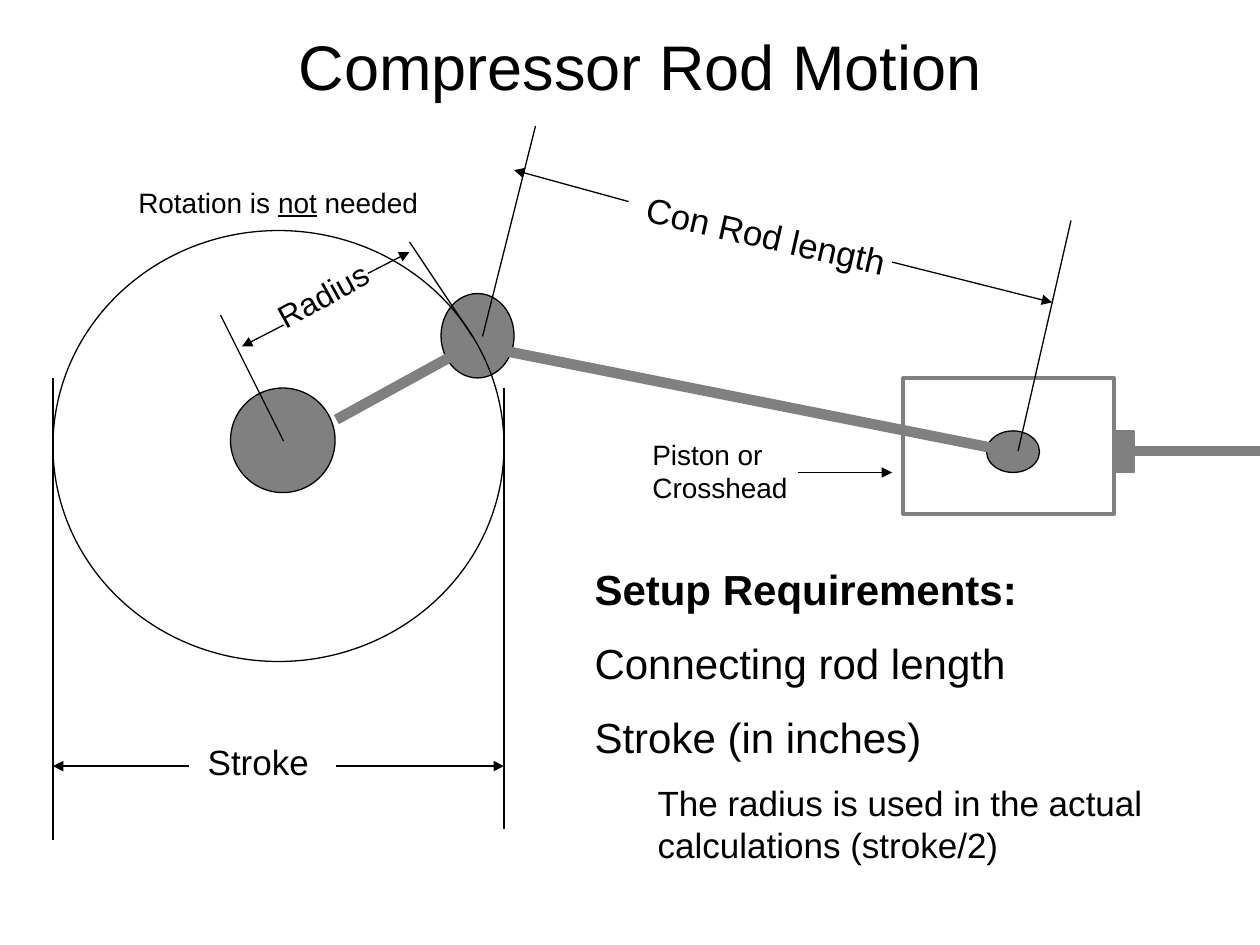
"""Build the compressor rod motion slide."""
from lxml import etree
from pptx import Presentation
from pptx.dml.color import RGBColor
from pptx.enum.shapes import MSO_CONNECTOR, MSO_SHAPE
from pptx.enum.text import PP_ALIGN
from pptx.oxml.ns import qn
from pptx.util import Inches, Pt

OVAL, RECT = MSO_SHAPE.OVAL, MSO_SHAPE.RECTANGLE
STRAIGHT = MSO_CONNECTOR.STRAIGHT
LEFT, CENTER = PP_ALIGN.LEFT, PP_ALIGN.CENTER
BLACK, GRAY = "000000", "808080"

PINS = [
    (1.83, 3.08, 0.83, 0.83),
    (3.5, 2.33, 0.58, 0.67),
    (7.83, 3.42, 0.42, 0.33),
]
RODS = [
    (2.67, 3.33, 3.58, 2.83),
    (3.83, 2.75, 8, 3.58),
    (9, 3.58, 10, 3.58),
]
CROSSHEAD = (7.17, 3, 1.67, 1.08)
ROD_COLLAR = (8.83, 3.42, 0.17, 0.33)
CRANK_CIRCLE = (0.42, 1.83, 3.58, 3.42)
EXTENSION_LINES = [
    (3.83, 2.67, 4.25, 1),
    (8.08, 3.58, 8.5, 1.75),
    (4, 3.08, 4, 6.58),
    (0.42, 3, 0.42, 6.67),
    (3.75, 2.67, 3.25, 1.92),
    (2.25, 3.5, 1.75, 2.5),
]
ARROWS = [
    (4.99, 1.6, 4.08, 1.35),
    (7.08, 2.08, 8.35, 2.4),
    (1.5, 6.08, 0.42, 6.08),
    (2.67, 6.08, 4, 6.08),
    (6.33, 3.75, 7.08, 3.75),
    (2.92, 2.17, 3.25, 2),
    (2.25, 2.58, 1.92, 2.75),
]
LABELS = [
    ("Compressor Rod Motion", (0.58, 0.17, 9, 0.71), 36, 0, CENTER),
    ("Con Rod length", (5.01, 1.69, 2.5, 0.44), 20, 12.7, LEFT),
    ("Stroke", (1.55, 5.83, 1.1, 0.43), 20, 0, LEFT),
    ("Piston or Crosshead", (5.08, 3.42, 1.5, 0.64), 16, 0, LEFT),
    ("Radius", (2.07, 2.13, 1.02, 0.4), 18, 331.1, LEFT),
]
ROTATION_NOTE = [("Rotation is ", False), ("not", True), (" needed", False)]
REQUIREMENTS = [
    ("Setup Requirements:", dict(size=24, bold=True)),
    ("Connecting rod length", dict(size=24, before=13.5)),
    ("Stroke (in inches)", dict(size=24, before=13.5)),
    ("The radius is used in the actual calculations (stroke/2)",
     dict(size=20, before=11.5, indent=0.5)),
]


def rgb(color):
    return RGBColor.from_string(color)


def add_part(s, kind, box, fill=None, line=BLACK, width=0.75):
    sp = s.shapes.add_shape(kind, *map(Inches, box))
    sp.shadow.inherit = False
    if fill:
        sp.fill.solid()
        sp.fill.fore_color.rgb = rgb(fill)
    else:
        sp.fill.background()
    sp.line.color.rgb = rgb(line)
    sp.line.width = Pt(width)


def add_line(s, ends, color=BLACK, width=0.75, arrow=False):
    sp = s.shapes.add_connector(STRAIGHT, *map(Inches, ends))
    sp.line.color.rgb = rgb(color)
    sp.line.width = Pt(width)
    if arrow:
        etree.SubElement(sp.line._get_or_add_ln(), qn("a:tailEnd"), type="triangle")
    etree.SubElement(sp._element.spPr, qn("a:effectLst"))


def add_box(s, box, rotation=0):
    sp = s.shapes.add_textbox(*map(Inches, box))
    sp.rotation = rotation
    sp.text_frame.word_wrap = True
    return sp.text_frame


def add_run(p, text, size, bold=False, underline=False):
    r = p.add_run()
    r.text = text
    r.font.name = "Arial"
    r.font.size = Pt(size)
    r.font.bold = bold
    r.font.underline = underline
    r.font.color.rgb = rgb(BLACK)


def add_paragraph(tf, text, size, bold=False, before=0, indent=0):
    p = tf.add_paragraph() if tf.text else tf.paragraphs[0]
    p.space_before = Pt(before)
    if indent:
        p.level = 1
        p._p.get_or_add_pPr().set("marL", str(Inches(indent)))
    add_run(p, text, size, bold=bold)
    return p


def main():
    prs = Presentation()
    prs.slide_width, prs.slide_height = Inches(10), Inches(7.5)
    s = prs.slides.add_slide(prs.slide_layouts[6])

    for box in PINS:
        add_part(s, OVAL, box, fill=GRAY)
    for ends in RODS:
        add_line(s, ends, color=GRAY, width=6)
    add_part(s, RECT, CROSSHEAD, line=GRAY, width=2.25)
    add_part(s, RECT, ROD_COLLAR, fill=GRAY, line=GRAY)
    add_part(s, OVAL, CRANK_CIRCLE)
    for ends in EXTENSION_LINES:
        add_line(s, ends)
    for ends in ARROWS:
        add_line(s, ends, arrow=True)

    for text, box, size, rotation, align in LABELS:
        add_paragraph(add_box(s, box, rotation), text, size).alignment = align
    p = add_box(s, (1, 1.42, 2.5, 0.37)).paragraphs[0]
    for text, underline in ROTATION_NOTE:
        add_run(p, text, 16, underline=underline)
    tf = add_box(s, (4.62, 4.42, 5.08, 2.56))
    for text, style in REQUIREMENTS:
        add_paragraph(tf, text, **style)

    prs.save("out.pptx")


if __name__ == "__main__":
    main()
